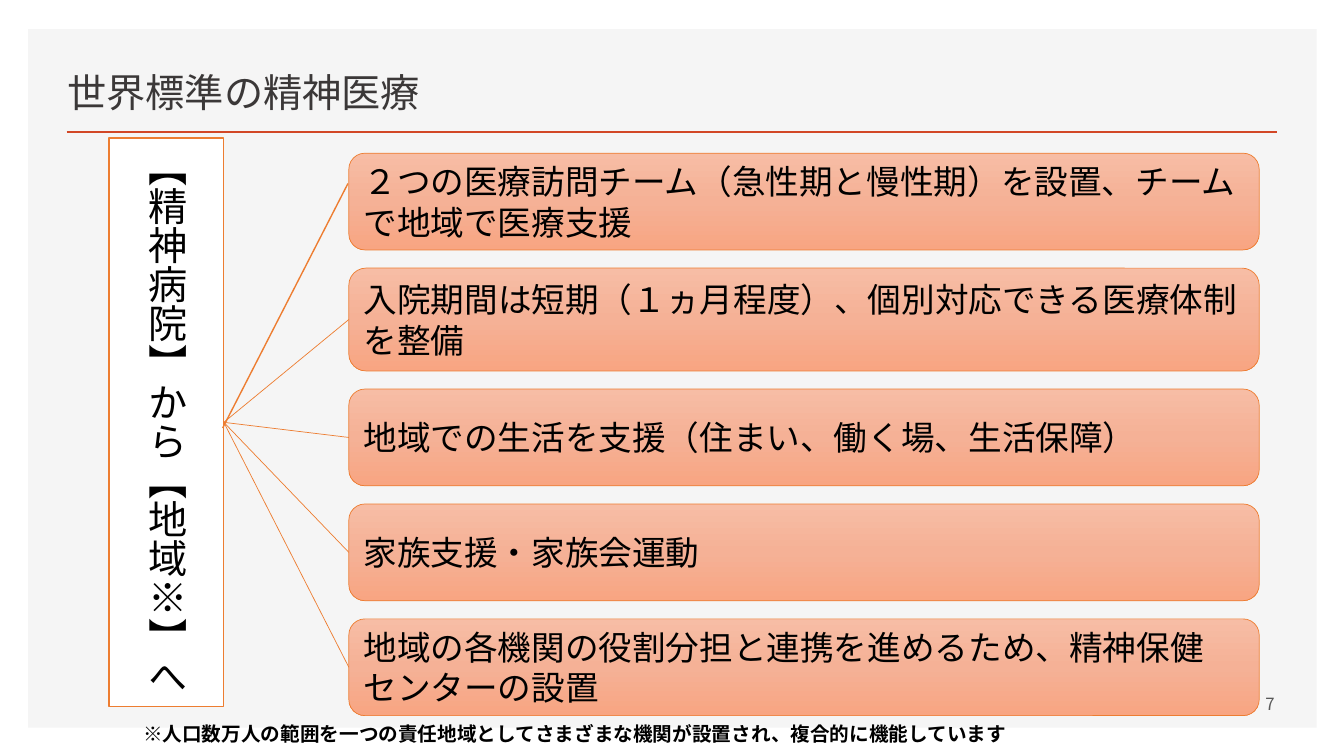
"""Builds the slide on moving psychiatric care from hospital to community."""
from lxml import etree
from pptx import Presentation
from pptx import util as u
from pptx.dml.color import RGBColor
from pptx.enum import lang, shapes, text
from pptx.oxml.ns import qn

TITLE = "世界標準の精神医療"
SHIFT = "【精神病院】から【地域※】へ"
MEASURES = [
    (0.96, ["２つの医療訪問チーム（急性期と慢性期）を設置、チームで地域で医療支援"]),
    (1.02, ["入院期間は短期（１ヵ月程度）、個別対応できる医療体制を整備"]),
    (0.96, ["地域での生活を支援（住まい、働く場、生活保障）"]),
    (0.96, ["家族支援・家族会運動"]),
    (0.96, ["地域の各機関の役割分担と連携を進めるため、精神保健", "センターの設置"]),
]
NOTE = "※人口数万人の範囲を一つの責任地域としてさまざまな機関が設置され、複合的に機能しています"
PAGE = "7"

THEME = {
    "panel": "F5F5F5", "rule": "D24726", "accent": "ED7D31", "white": "FFFFFF",
    "gradient": [(0, "F7BDA5"), (50, "F5B196"), (100, "F8A582")],
    "title": {"size": 28, "name": "Noto Sans CJK JP", "color": "3B3838"},
    "shift": {"size": 28, "name": "Lato", "color": "000000"},
    "measure": {"size": 24, "name": "Lato", "color": "000000"},
    "note": {"size": 14, "name": "Lato", "color": "000000", "bold": True},
    "page": {"size": 12, "name": "Noto Sans CJK JP", "color": "595959"},
}
SHIFT_BOX = (1.08, 1.37, 1.14, 5.64)
MEASURE_X, MEASURE_Y, MEASURE_W, GAP = 3.46, 1.52, 9.03, 0.18
MIDDLE, TOP, BOTTOM = (text.MSO_ANCHOR.MIDDLE, text.MSO_ANCHOR.TOP,
                       text.MSO_ANCHOR.BOTTOM)
LEFT, CENTER, RIGHT = text.PP_ALIGN.LEFT, text.PP_ALIGN.CENTER, text.PP_ALIGN.RIGHT


def rgb(value):
    return RGBColor.from_string(value)


def write(sp, lines, style, anchor=MIDDLE, align=LEFT):
    tf = sp.text_frame
    tf.word_wrap = True
    tf.vertical_anchor = anchor
    for i, line in enumerate(lines):
        p = tf.add_paragraph() if i else tf.paragraphs[0]
        p.alignment = align
        r = p.add_run()
        r.text = line
        fmt = dict(THEME[style])
        r.font.color.rgb = rgb(fmt.pop("color"))
        fmt["size"] = u.Pt(fmt["size"])
        fmt["language_id"] = lang.MSO_LANGUAGE_ID.JAPANESE
        for key, value in fmt.items():
            setattr(r.font, key, value)
        latin = r.font._element.find(qn("a:latin"))
        ea = etree.Element(qn("a:ea"), typeface=fmt["name"])
        latin.addnext(ea)


def label(s, box, content, style, **layout):
    sp = s.shapes.add_textbox(*map(u.Inches, box))
    write(sp, [content], style, **layout)
    return sp


def block(s, kind, box, fill, line=None, width=0):
    sp = s.shapes.add_shape(kind, *map(u.Inches, box))
    sp.shadow.inherit = False
    sp.fill.solid()
    sp.fill.fore_color.rgb = rgb(fill)
    if line:
        sp.line.color.rgb = rgb(line)
        sp.line.width = u.Pt(width)
    else:
        sp.line.fill.background()
    return sp


def shade(sp):
    sp.fill.gradient()
    sp.fill.gradient_angle = 270
    stops = sp.fill._fill._gradFill.find(qn("a:gsLst"))
    for stop in list(stops):
        stops.remove(stop)
    for pos, color in THEME["gradient"]:
        gs = etree.SubElement(stops, qn("a:gs"), pos=str(pos * 1000))
        etree.SubElement(gs, qn("a:srgbClr"), val=color)


def connect(s, start, end, color, width):
    c = s.shapes.add_connector(shapes.MSO_CONNECTOR.STRAIGHT,
                               *map(u.Inches, start + end))
    c.line.color.rgb = rgb(color)
    c.line.width = u.Pt(width)
    etree.SubElement(c._element.spPr, qn("a:effectLst"))
    return c


def main():
    prs = Presentation()
    prs.slide_width, prs.slide_height = u.Inches(13.33), u.Inches(7.5)
    s = prs.slides.add_slide(prs.slide_layouts[6])
    kind = shapes.MSO_SHAPE

    block(s, kind.RECTANGLE, (0.28, 0.29, 12.78, 6.93), THEME["panel"])
    connect(s, (0.66, 1.31), (12.67, 1.31), THEME["rule"], 2)
    label(s, (0.57, 0.49, 7.52, 0.7), TITLE, "title", anchor=BOTTOM)

    boxes, y = [], MEASURE_Y
    for height, lines in MEASURES:
        sp = block(s, kind.ROUNDED_RECTANGLE, (MEASURE_X, y, MEASURE_W, height),
                   THEME["white"], THEME["accent"], 0.5)
        shade(sp)
        write(sp, lines, "measure")
        boxes.append(sp)
        y += height + GAP

    shift = block(s, kind.LINE_CALLOUT_1, SHIFT_BOX, THEME["white"], THEME["accent"], 1)
    for i, value in enumerate((0.51, 0.99, 0.08, 2.08)):
        shift.adjustments[i] = value
    write(shift, [SHIFT], "shift", align=CENTER)
    shift.text_frame._txBody.bodyPr.set("vert", "eaVert")

    x, top, width, height = SHIFT_BOX
    hub = (x + width, top + height / 2)
    for sp in boxes[1:]:
        c = connect(s, hub, (MEASURE_X, hub[1]), THEME["accent"], 0.5)
        c.end_connect(sp, 1)

    label(s, (1.32, 7.11, 10.69, 0.34), NOTE, "note", anchor=TOP)
    label(s, (9.16, 6.78, 3.58, 0.4), PAGE, "page", align=RIGHT)
    prs.save("out.pptx")


if __name__ == "__main__":
    main()
